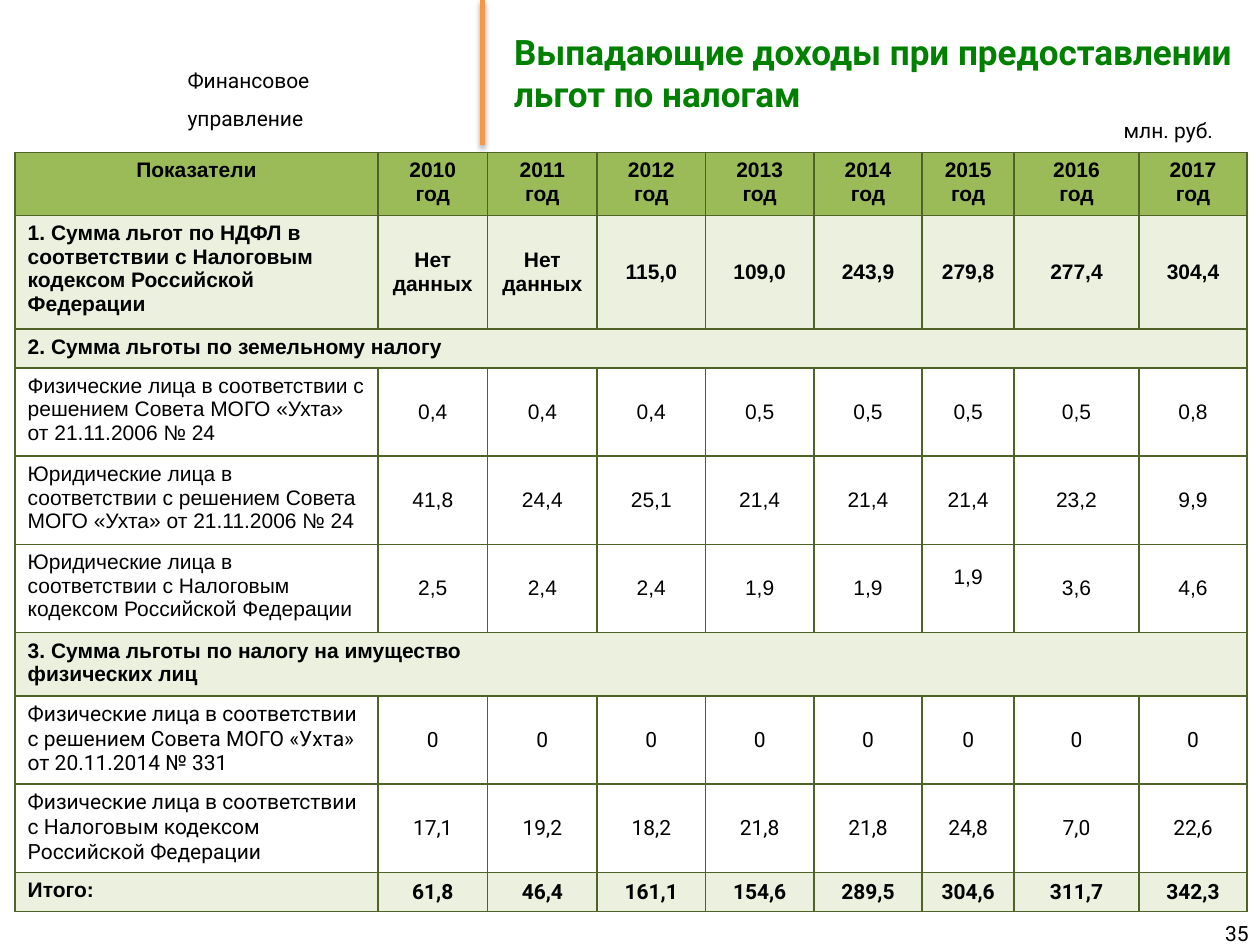
from lxml import etree
from pptx import Presentation
from pptx.dml.color import RGBColor
from pptx.enum.shapes import MSO_CONNECTOR
from pptx.enum.text import MSO_ANCHOR, PP_ALIGN
from pptx.oxml.ns import qn
from pptx.util import Inches, Pt

LEFT, CENTER, RIGHT = PP_ALIGN.LEFT, PP_ALIGN.CENTER, PP_ALIGN.RIGHT
TOP, MIDDLE = MSO_ANCHOR.TOP, MSO_ANCHOR.MIDDLE
STRAIGHT = MSO_CONNECTOR.STRAIGHT
TITLE_ONLY = 5

COLORS = {
    "text": "000000",
    "title": "008000",
    "accent": "F79646",
    "header": "9BBB59",
    "section": "EBF1DE",
    "border": "4F6228",
}

COLUMN_WIDTHS = [2.88, 0.87, 0.87, 0.86, 0.86, 0.86, 0.73, 0.99, 0.86]
HEADER = ["Показатели", "2010 год"] + [f"{year}\nгод" for year in range(2011, 2018)]
COUNCIL = "в соответствии с решением Совета МОГО «Ухта» от"
TAX_CODE = "в соответствии с Налоговым кодексом Российской Федерации"

# kind, height, label, values
ROWS = [
    ("header", 0.48, HEADER[0], HEADER[1:]),
    ("section", 0.85, f"1. Сумма льгот по НДФЛ {TAX_CODE}",
     ["Нет данных", "Нет данных", "115,0", "109,0", "243,9", "279,8", "277,4", "304,4"]),
    ("section", 0.31, "2. Сумма льготы по земельному налогу", []),
    ("land", 0.66, f"Физические лица {COUNCIL} 21.11.2006 № 24",
     ["0,4", "0,4", "0,4", "0,5", "0,5", "0,5", "0,5", "0,8"]),
    ("land", 0.66, f"Юридические лица {COUNCIL} 21.11.2006 № 24",
     ["41,8", "24,4", "25,1", "21,4", "21,4", "21,4", "23,2", "9,9"]),
    ("land", 0.66, f"Юридические лица {TAX_CODE}",
     ["2,5", "2,4", "2,4", "1,9", "1,9", "1,9", "3,6", "4,6"]),
    ("section", 0.47, "3. Сумма льготы по налогу на имущество\nфизических лиц", []),
    ("property", 0.69, f"Физические лица {COUNCIL} 20.11.2014 № 331", ["0"] * 8),
    ("property", 0.69, f"Физические лица {TAX_CODE}",
     ["17,1", "19,2", "18,2", "21,8", "21,8", "24,8", "7,0", "22,6"]),
    ("total", 0.31, "Итого:",
     ["61,8", "46,4", "161,1", "154,6", "289,5", "304,6", "311,7", "342,3"]),
]
FILLS = {"header": "header", "section": "section", "total": "section"}
RAISED_CELL = (5, 6)


def write(frame, text, size=12, font="Roboto", color="text", bold=False,
          align=LEFT, spacing=None):
    frame.text = text
    for paragraph in frame.paragraphs:
        paragraph.alignment = align
        if spacing:
            paragraph.line_spacing = spacing
        for run in paragraph.runs:
            run.font.size = Pt(size)
            run.font.name = font
            run.font.bold = bold
            run.font.color.rgb = RGBColor.from_string(COLORS[color])


class SlideBuilder:
    def __init__(self, slide):
        self.slide = slide

    def title(self, text, left, top, width, height):
        heading = self.slide.shapes.title
        heading.left, heading.top = Inches(left), Inches(top)
        heading.width, heading.height = Inches(width), Inches(height)
        heading.text_frame.vertical_anchor = MIDDLE
        write(heading.text_frame, text, size=20, color="title", bold=True)

    def label(self, text, left, top, width, height, anchor=TOP, right_inset=0.1, **style):
        frame = self.slide.shapes.add_textbox(
            Inches(left), Inches(top), Inches(width), Inches(height)).text_frame
        frame.word_wrap = True
        frame.vertical_anchor = anchor
        frame.margin_right = Inches(right_inset)
        write(frame, text, **style)

    def divider(self, x, top, bottom):
        rule = self.slide.shapes.add_connector(
            STRAIGHT, Inches(x), Inches(top), Inches(x), Inches(bottom))
        rule.line.color.rgb = RGBColor.from_string(COLORS["accent"])
        rule.line.width = Pt(3)
        effects = etree.SubElement(rule._element.spPr, qn("a:effectLst"))
        shadow = etree.SubElement(
            effects, qn("a:outerShdw"), blurRad=str(Pt(3.1)), dist=str(Pt(1.8)),
            dir="5400000", rotWithShape="0")
        shade = etree.SubElement(shadow, qn("a:srgbClr"), val=COLORS["text"])
        etree.SubElement(shade, qn("a:alpha"), val="35000")

    def cell(self, cell, text, fill, anchor, **style):
        properties = cell._tc.get_or_add_tcPr()
        for side in ("a:lnL", "a:lnR", "a:lnT", "a:lnB"):
            border = etree.SubElement(properties, qn(side), w=str(Pt(1)))
            solid = etree.SubElement(border, qn("a:solidFill"))
            etree.SubElement(solid, qn("a:srgbClr"), val=COLORS["border"])
        if fill:
            cell.fill.solid()
            cell.fill.fore_color.rgb = RGBColor.from_string(COLORS[fill])
        else:
            cell.fill.background()
        cell.vertical_anchor = anchor
        write(cell.text_frame, text, **style)

    def table(self, left, top, widths, rows):
        height = sum(row[1] for row in rows)
        table = self.slide.shapes.add_table(
            len(rows), len(widths), Inches(left), Inches(top),
            Inches(sum(widths)), Inches(height)).table
        table.first_row = table.horz_banding = False
        for column, width in zip(table.columns, widths):
            column.width = Inches(width)
        for r, (kind, row_height, label, values) in enumerate(rows):
            table.rows[r].height = Inches(row_height)
            fill = FILLS.get(kind)
            label_font = "Roboto" if kind == "property" else "Arial"
            value_font = "Roboto" if kind in ("property", "total") else "Arial"
            self.cell(table.cell(r, 0), label, fill, TOP, font=label_font,
                      bold=bool(fill), align=CENTER if kind == "header" else LEFT)
            value_anchor = TOP if kind == "header" else MIDDLE
            for c in range(1, len(widths)):
                self.cell(table.cell(r, c), values[c - 1] if values else "", fill,
                          value_anchor, font=value_font, bold=bool(fill), align=CENTER)
            if not values:
                table.cell(r, 0).merge(table.cell(r, len(widths) - 1))
        table.cell(*RAISED_CELL).margin_bottom = Inches(0.24)


def main():
    deck = Presentation()
    deck.slide_width, deck.slide_height = Inches(10), Inches(7.5)
    builder = SlideBuilder(deck.slides.add_slide(deck.slide_layouts[TITLE_ONLY]))
    builder.label("Финансовое управление", 1.39, 0.39, 2.1, 0.36,
                  right_inset=0.4, spacing=1.5)
    builder.divider(3.83, 0, 1.15)
    builder.title("Выпадающие доходы при предоставлении льгот по налогам",
                  3.98, 0, 6.02, 1.15)
    builder.label("35", 7.68, 7.21, 2.33, 0.4, anchor=MIDDLE, align=RIGHT)
    builder.table(0.12, 1.21, COLUMN_WIDTHS, ROWS)
    builder.label("млн. руб.", 8.82, 0.88, 1.18, 0.3)
    deck.save("out.pptx")


if __name__ == "__main__":
    main()
